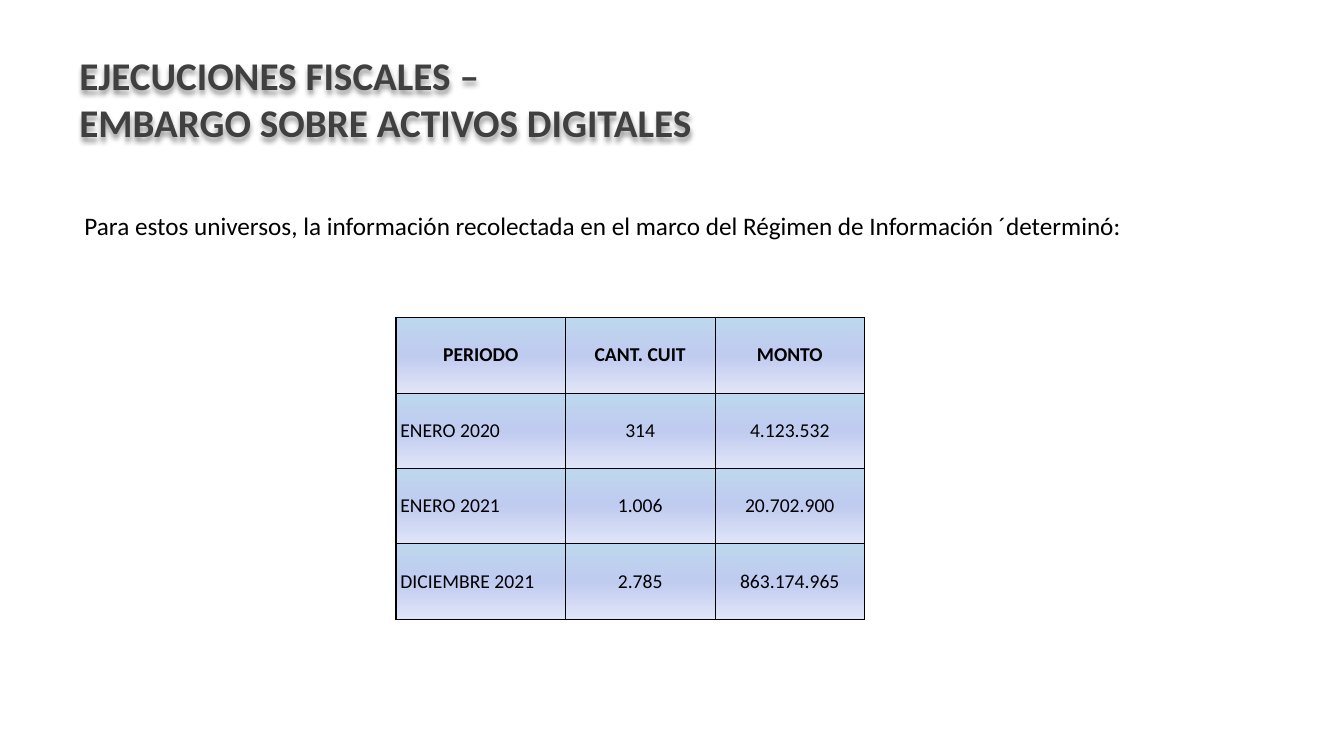
from pptx import Presentation
from pptx import util as u
from pptx.dml.color import RGBColor
from pptx.enum import text
from pptx.oxml import parse_xml
from pptx.oxml.ns import nsdecls

TITLE = ["EJECUCIONES FISCALES –", "EMBARGO SOBRE ACTIVOS DIGITALES"]
INTRO = ["Para estos universos, la información recolectada en el marco del "
         "Régimen de Información ´determinó:"]
ROWS = [
    ("PERIODO", "CANT. CUIT", "MONTO"),
    ("ENERO 2020", "314", "4.123.532"),
    ("ENERO 2021", "1.006", "20.702.900"),
    ("DICIEMBRE 2021", "2.785", "863.174.965"),
]
COLUMN_WIDTHS = (4.27, 3.77, 3.77)
ROW_HEIGHT = 1.9
GRADIENT = {0: "BDD7EE", 50: "C0CBF0", 100: "E0E5F7"}
BLACK, GRAY = "000000", "404040"
ALIGN = text.PP_ALIGN


def color(value):
    return RGBColor.from_string(value)


def style(paragraph, size, ink, bold, align):
    paragraph.alignment = align
    font = paragraph.font
    font.name, font.size, font.bold = "Calibri", u.Pt(size), bold
    font.color.rgb = color(ink)


def add_text(slide, box, lines, size, ink, bold, align):
    shape = slide.shapes.add_textbox(*map(u.Cm, box))
    frame = shape.text_frame
    frame.word_wrap = True
    frame.text = "\n".join(lines)
    for paragraph in frame.paragraphs:
        style(paragraph, size, ink, bold, align)
    return shape


def add_shadow(shape):
    shape._element.spPr.append(parse_xml(
        f'<a:effectLst {nsdecls("a")}>'
        '<a:outerShdw blurRad="50800" dist="38100" dir="5400000" algn="t" rotWithShape="0">'
        f'<a:srgbClr val="{BLACK}"><a:alpha val="40000"/></a:srgbClr>'
        '</a:outerShdw></a:effectLst>'))


def paint_cell(cell, borders):
    properties = cell._tc.get_or_add_tcPr()
    for side, width in borders.items():
        properties.append(parse_xml(
            f'<a:ln{side} {nsdecls("a")} w="{u.Pt(width)}"><a:solidFill>'
            f'<a:srgbClr val="{BLACK}"/></a:solidFill></a:ln{side}>'))
    stops = "".join(f'<a:gs pos="{position * 1000}"><a:srgbClr val="{value}"/></a:gs>'
                    for position, value in GRADIENT.items())
    properties.append(parse_xml(
        f'<a:gradFill {nsdecls("a")} rotWithShape="1"><a:gsLst>{stops}</a:gsLst>'
        '<a:lin ang="5400000" scaled="0"/></a:gradFill>'))


def add_figures(slide, left, top):
    last = len(COLUMN_WIDTHS) - 1
    table = slide.shapes.add_table(
        len(ROWS), len(COLUMN_WIDTHS), u.Cm(left), u.Cm(top),
        u.Cm(sum(COLUMN_WIDTHS)), u.Cm(ROW_HEIGHT * len(ROWS))).table
    table.horz_banding = False
    for column, width in zip(table.columns, COLUMN_WIDTHS):
        column.width = u.Cm(width)
    for r, values in enumerate(ROWS):
        table.rows[r].height = u.Cm(ROW_HEIGHT)
        for c, value in enumerate(values):
            cell = table.cell(r, c)
            is_period = r > 0 and c == 0
            cell.text = value
            cell.vertical_anchor = text.MSO_ANCHOR.MIDDLE
            cell.margin_left = u.Cm(0.11 if is_period else 0)
            cell.margin_right = cell.margin_top = cell.margin_bottom = 0
            style(cell.text_frame.paragraphs[0], 14, BLACK, r == 0,
                  ALIGN.LEFT if is_period else ALIGN.CENTER)
            paint_cell(cell, {"L": 1 if c == 0 else 0.5, "R": 1 if c == last else 0.5,
                              "T": 1 if r == 0 else 0.5, "B": 0.5})


def main():
    presentation = Presentation()
    presentation.slide_width, presentation.slide_height = u.Cm(33.87), u.Cm(19.05)
    slide = presentation.slides.add_slide(presentation.slide_layouts[6])
    add_text(slide, (1.88, 5.18, 28.88, 1.02), INTRO, 18, BLACK, False, ALIGN.JUSTIFY)
    title = add_text(slide, (1.75, 1.17, 16.84, 2.64), TITLE, 28, GRAY, True, ALIGN.LEFT)
    add_shadow(title)
    add_figures(slide, 9.98, 8)
    presentation.save("out.pptx")


if __name__ == "__main__":
    main()
